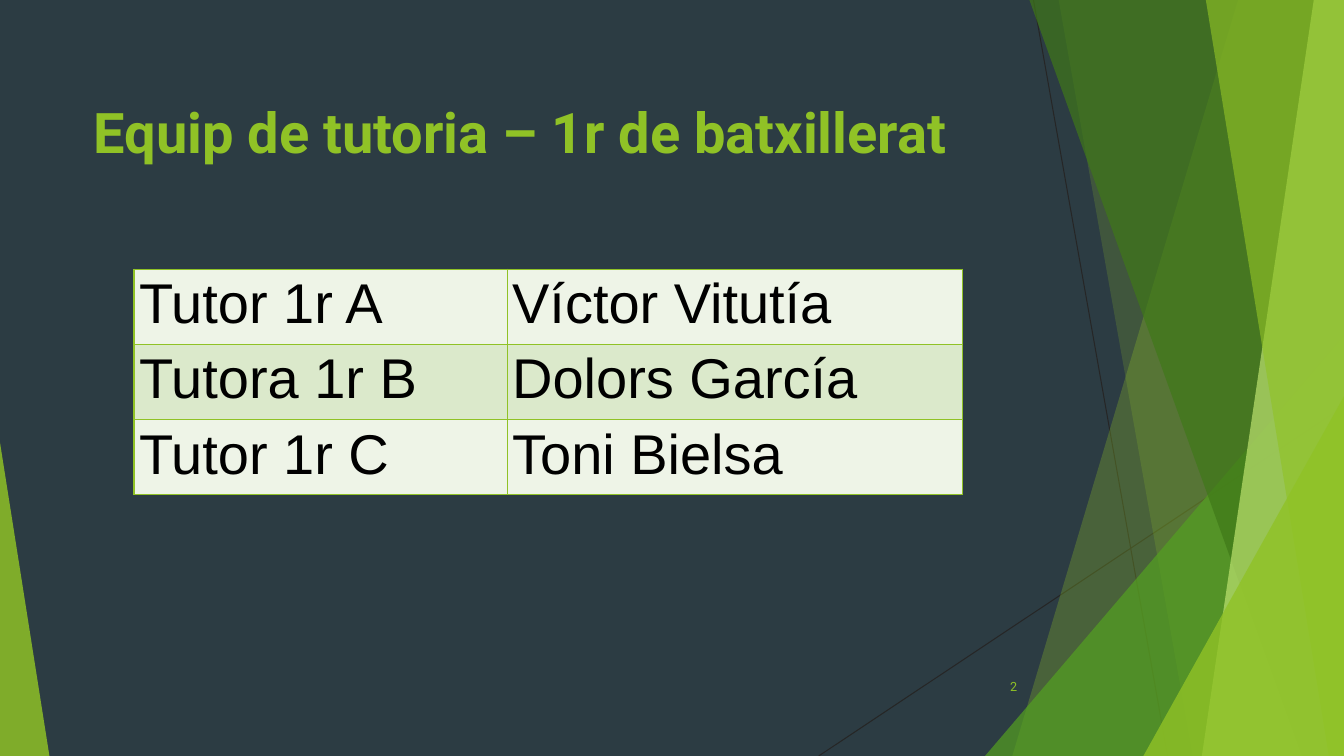
from lxml.etree import SubElement
from pptx import Presentation
from pptx.dml.color import RGBColor
from pptx.enum.shapes import MSO_CONNECTOR
from pptx.enum.text import MSO_ANCHOR, PP_ALIGN
from pptx.oxml.ns import qn
from pptx.util import Emu, Pt

PX = 9144
W, H = 1333, 750
COLORS = {
    "background": "2C3C43", "line": "262626", "lime": "90C226",
    "green": "54A021", "forest": "3F7818", "pale": "BFE471",
    "text": "000000", "row_light": "EEF4E7", "row_dark": "DBE9CB",
}
FACETS = [
    ("lime", 29, [(1228, 0), (W, 0), (W, H), (1004, H)]),
    ("lime", 20, [(1050, 0), (W, 0), (W, H), (1183, H)]),
    ("green", 71, [(977, H), (W, 333), (W, H)]),
    ("forest", 69, [(1021, 0), (W, 0), (W, H), (1291, H)]),
    ("pale", 69, [(1303, 0), (W, 0), (W, H), (1192, H)]),
    ("lime", 64, [(1196, 0), (W, 0), (W, H), (1318, H)]),
    ("lime", 80, [(1134, H), (W, 393), (W, H)]),
    ("lime", 84, [(0, H), (0, 439), (49, H)]),
]
TUTORS = [
    ("Tutor 1r A", "Víctor Vitutía"),
    ("Tutora 1r B", "Dolors García"),
    ("Tutor 1r C", "Toni Bielsa"),
]


class SlideBuilder:
    """Draws styled elements on one slide, with lengths in px."""

    def __init__(self, prs):
        self.s = prs.slides.add_slide(prs.slide_layouts[6])
        fill = self.s.background.fill
        fill.solid()
        fill.fore_color.rgb = self.color("background")

    def color(self, name):
        return RGBColor.from_string(COLORS[name])

    def emu(self, *lengths):
        return [Emu(v * PX) for v in lengths]

    def line(self, x1, y1, x2, y2):
        sp = self.s.shapes.add_connector(MSO_CONNECTOR.STRAIGHT, *self.emu(x1, y1, x2, y2))
        sp.line.color.rgb = self.color("line")
        sp.line.width = Pt(0.75)
        SubElement(sp._element.spPr, qn("a:effectLst"))

    def facet(self, color, opacity, points):
        builder = self.s.shapes.build_freeform(*points[0], scale=PX)
        builder.add_line_segments(points[1:], close=True)
        sp = builder.convert_to_shape()
        sp.shadow.inherit = False
        sp.line.fill.background()
        sp.fill.solid()
        sp.fill.fore_color.rgb = self.color(color)
        clr = sp._element.spPr.find(qn("a:solidFill"))[0]
        SubElement(clr, qn("a:alpha"), val=str(opacity * 1000))

    def format_run(self, p, size, font, color, bold=False):
        r = p.runs[0]
        r.font.size = Pt(size)
        r.font.name = font
        r.font.bold = bold
        r.font.color.rgb = self.color(color)

    def text(self, box, text, size, bold=False, wrap=True,
             align=PP_ALIGN.LEFT, anchor=MSO_ANCHOR.TOP):
        tf = self.s.shapes.add_textbox(*self.emu(*box)).text_frame
        tf.word_wrap = wrap
        tf.vertical_anchor = anchor
        tf.margin_left, tf.margin_top, tf.margin_right, tf.margin_bottom = self.emu(5, 5, 5, 5)
        tf.text = text
        p = tf.paragraphs[0]
        p.alignment = align
        self.format_run(p, size, "Roboto", "lime", bold)

    def borders(self, cell):
        tcPr = cell._tc.get_or_add_tcPr()
        for i, side in enumerate(("lnL", "lnR", "lnT", "lnB")):
            ln = tcPr.makeelement(qn(f"a:{side}"), {"w": str(Pt(1))})
            tcPr.insert(i, ln)
            SubElement(SubElement(ln, qn("a:solidFill")), qn("a:srgbClr"), val=COLORS["lime"])

    def table(self, x, y, widths, row_height, rows):
        box = self.emu(x, y, sum(widths), row_height * len(rows))
        table = self.s.shapes.add_table(len(rows), len(widths), *box).table
        for col, width in zip(table.columns, widths):
            col.width = Emu(width * PX)
        for i, row in enumerate(rows):
            for j, text in enumerate(row):
                cell = table.cell(i, j)
                cell.margin_left, cell.margin_right = self.emu(5, 5)
                cell.margin_top, cell.margin_bottom = self.emu(4, 4)
                cell.fill.solid()
                cell.fill.fore_color.rgb = self.color("row_dark" if i % 2 else "row_light")
                cell.text_frame.text = text
                self.format_run(cell.text_frame.paragraphs[0], 40, "Arial", "text")
                self.borders(cell)


def main():
    prs = Presentation()
    prs.slide_width, prs.slide_height = Emu(W * PX), Emu(H * PX)
    slide = SlideBuilder(prs)
    slide.line(1025, 0, 1158, H)
    slide.line(W, 403, 812, H)
    for facet in FACETS:
        slide.facet(*facet)
    slide.text((88, 92, 940, 144), "Equip de tutoria – 1r de batxillerat", 40, bold=True)
    slide.table(133, 267, (370, 452), 72, TUTORS)
    slide.text((996, 669, 18, 24), "2", 9, wrap=False,
               align=PP_ALIGN.RIGHT, anchor=MSO_ANCHOR.MIDDLE)
    prs.save("out.pptx")


if __name__ == "__main__":
    main()
